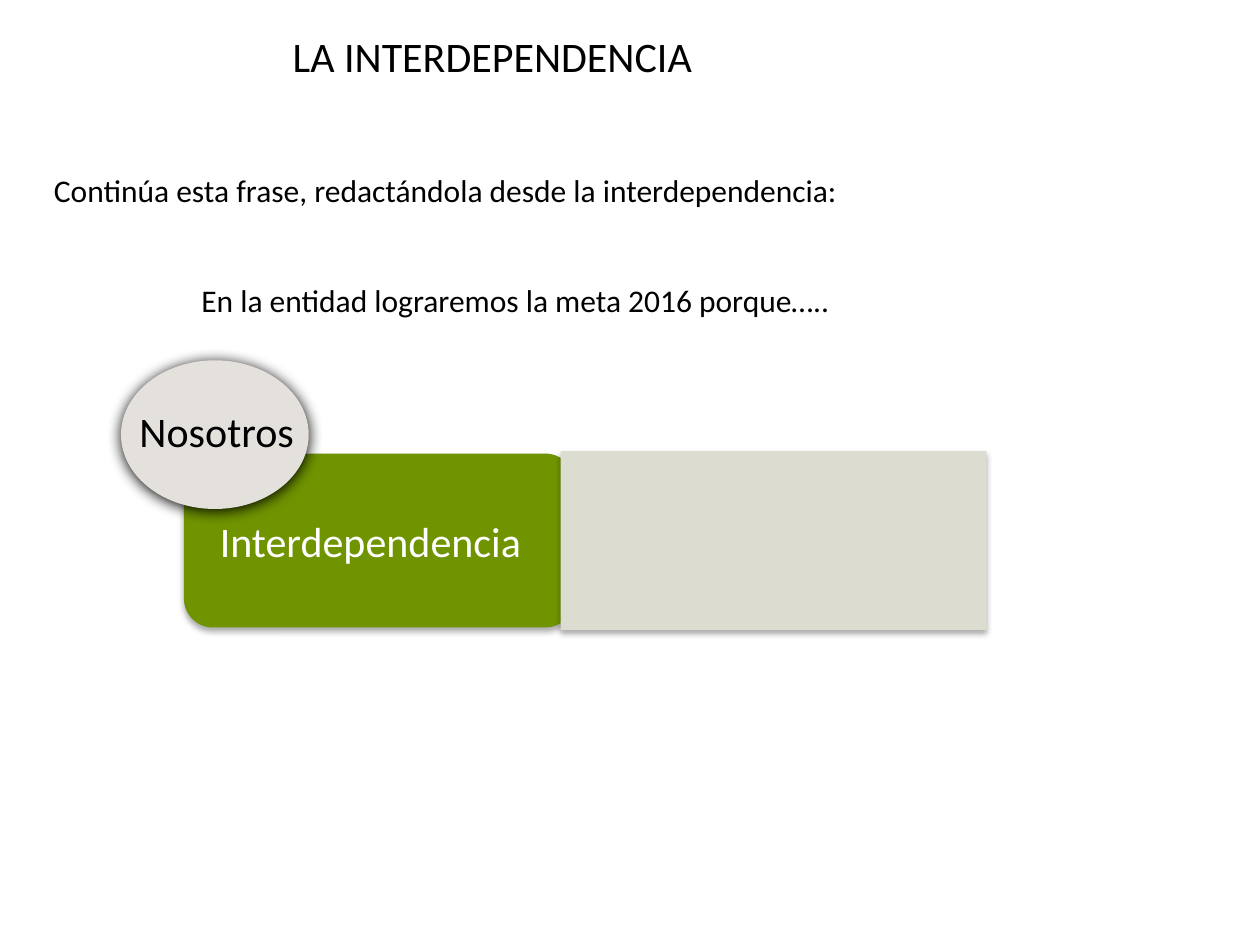
from dataclasses import dataclass

from lxml.etree import SubElement
from pptx import Presentation
from pptx.dml.color import RGBColor
from pptx.enum.shapes import MSO_SHAPE
from pptx.enum.text import PP_ALIGN
from pptx.oxml.ns import qn
from pptx.util import Inches, Pt


@dataclass(frozen=True)
class Theme:
    font: str = "Calibri"
    heading: int = 24
    body: int = 18
    ink: str = "000000"
    white: str = "FFFFFF"
    green: str = "6F9400"
    panel: str = "DDDCD0"
    badge: str = "E4E1DD"
    shadow: str = "000000"


THEME = Theme()
SOFT_SHADOW = (32, 3.5, 2.2)
STRONG_SHADOW = (100, 8.5, 1)


def add_text(slide, box, text, size, color=THEME.ink, align=PP_ALIGN.LEFT):
    tf = slide.shapes.add_textbox(*map(Inches, box)).text_frame
    tf.word_wrap = True
    p = tf.paragraphs[0]
    p.text = text
    p.alignment = align
    p.font.name = THEME.font
    p.font.size = Pt(size)
    p.font.color.rgb = RGBColor.from_string(color)


def add_shadow(sp, opacity, blur, distance):
    sp.shadow.inherit = False
    effects = sp._element.spPr.find(qn("a:effectLst"))
    outer = SubElement(
        effects, qn("a:outerShdw"), blurRad=str(Pt(blur)), dist=str(Pt(distance)),
        dir=str(90 * 60000), algn="ctr", rotWithShape="0",
    )
    color = SubElement(outer, qn("a:srgbClr"), val=THEME.shadow)
    SubElement(color, qn("a:alpha"), val=str(opacity * 1000))


def add_block(slide, kind, box, fill, shadow):
    sp = slide.shapes.add_shape(kind, *map(Inches, box))
    sp.fill.solid()
    sp.fill.fore_color.rgb = RGBColor.from_string(fill)
    sp.line.fill.background()
    add_shadow(sp, *shadow)


def main():
    prs = Presentation()
    prs.slide_width, prs.slide_height = Inches(10), Inches(7.5)
    s = prs.slides.add_slide(prs.slide_layouts[6])

    add_text(s, (0.12, 0.19, 7.5, 1.03), " LA INTERDEPENDENCIA",
             THEME.heading, align=PP_ALIGN.CENTER)
    add_text(s, (0.33, 1.31, 8.43, 0.4),
             "Continúa esta frase, redactándola desde la interdependencia:", THEME.body)

    add_block(s, MSO_SHAPE.ROUNDED_RECTANGLE, (1.46, 3.6, 3.1, 1.38),
              THEME.green, SOFT_SHADOW)
    add_block(s, MSO_SHAPE.RECTANGLE, (4.45, 3.58, 3.38, 1.42),
              THEME.panel, SOFT_SHADOW)
    add_block(s, MSO_SHAPE.OVAL, (0.96, 2.86, 1.49, 1.18),
              THEME.badge, STRONG_SHADOW)

    add_text(s, (0.88, 3.17, 1.68, 0.5), "Nosotros",
             THEME.heading, align=PP_ALIGN.CENTER)
    add_text(s, (1.24, 4.04, 3.4, 0.5), "Interdependencia",
             THEME.heading, THEME.white, PP_ALIGN.CENTER)
    add_text(s, (1.5, 2.18, 7.26, 0.4),
             "En la entidad lograremos la meta 2016 porque…..", THEME.body)

    prs.save("out.pptx")


if __name__ == "__main__":
    main()
